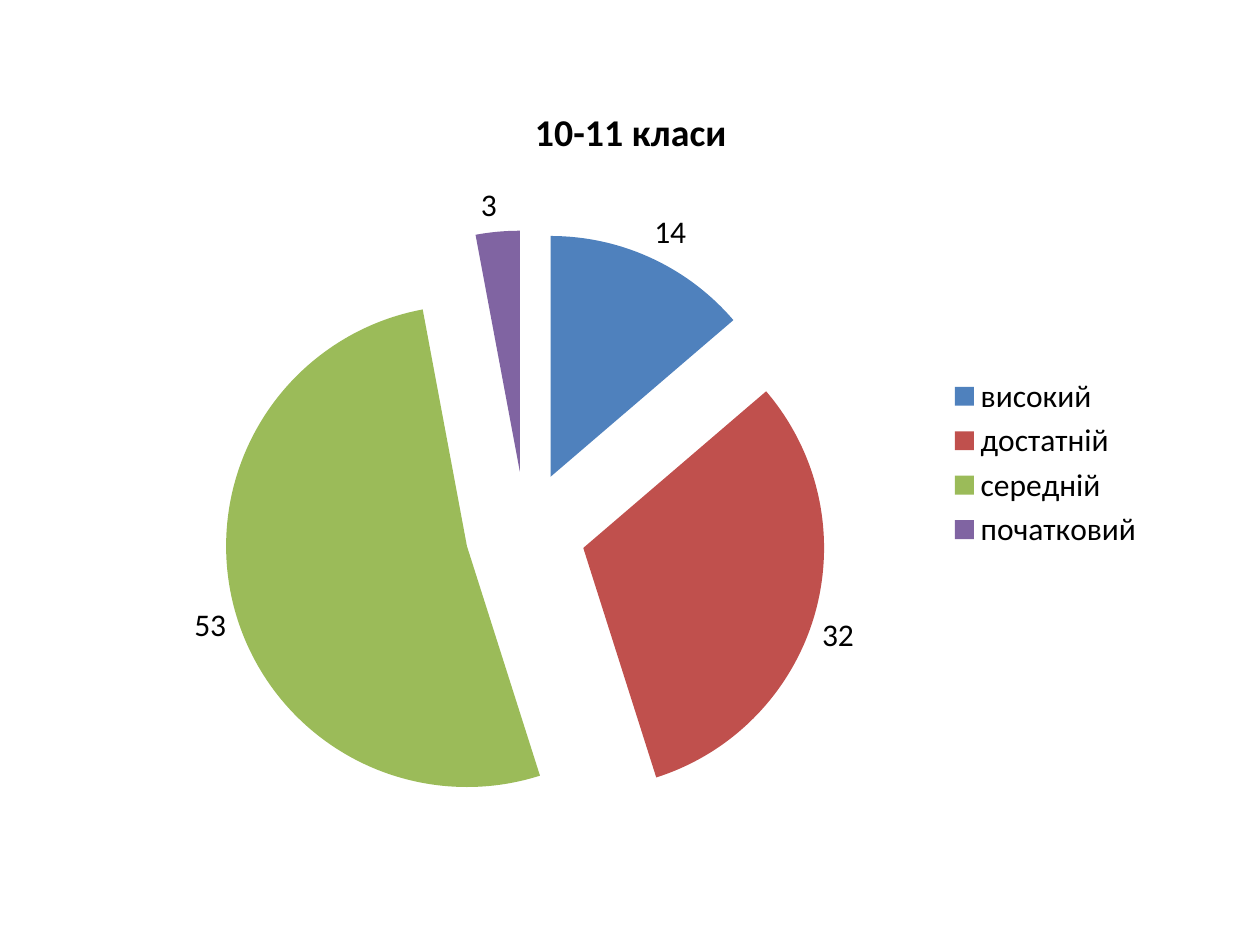
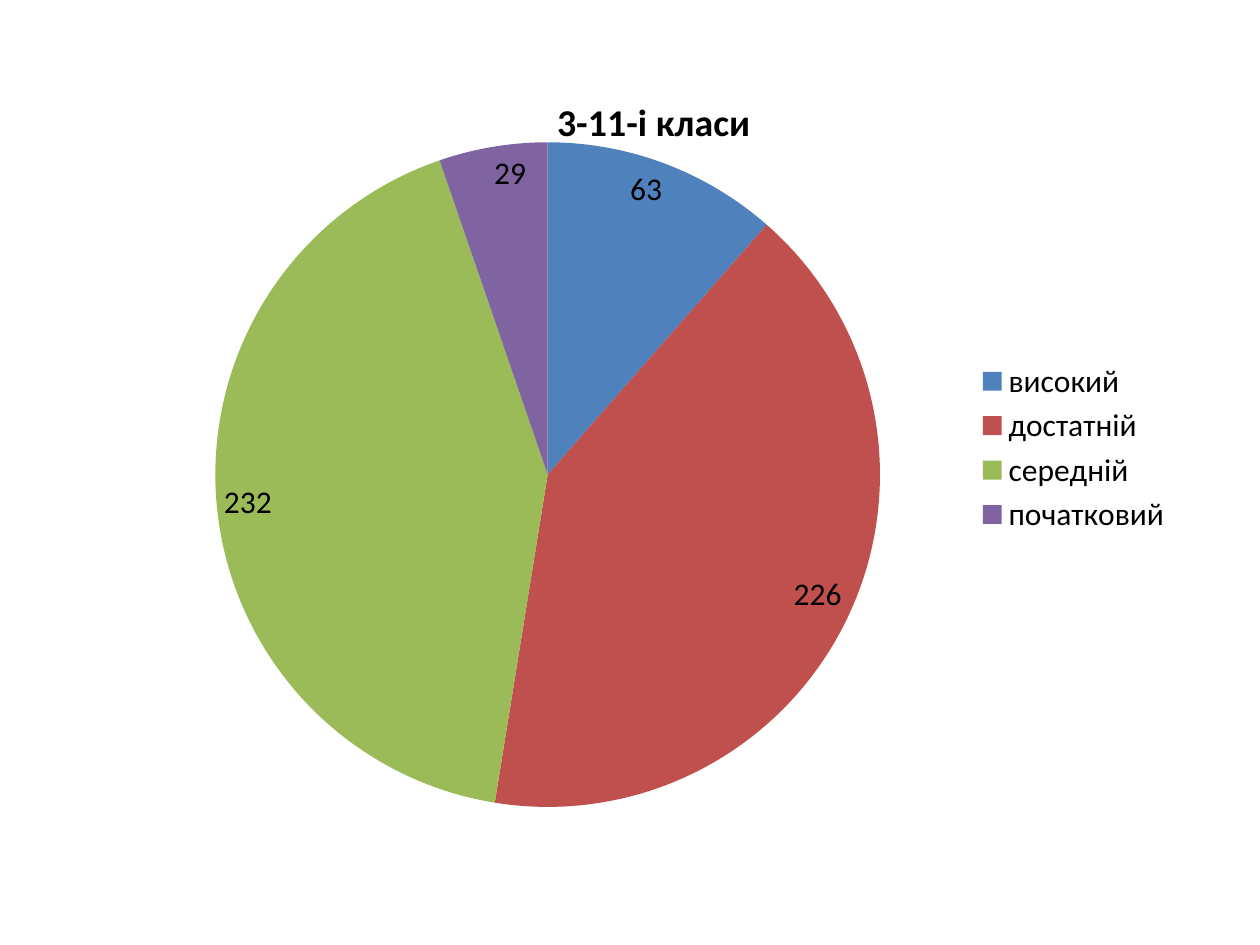
from lxml.etree import SubElement
from pptx import Presentation
from pptx.chart.data import CategoryChartData
from pptx.dml.color import RGBColor
from pptx.enum.chart import XL_CHART_TYPE, XL_LABEL_POSITION, XL_LEGEND_POSITION
from pptx.oxml.ns import qn
from pptx.util import Pt

# Shared settings
PX = 914400 // 126
FONT = "Calibri"
COLORS = {"text": "000000", "background": "FFFFFF"}
LEVEL_COLORS = {
    "високий": "4F81BD",
    "достатній": "C0504D",
    "середній ": "9BBB59",
    "початковий": "8064A2",
}


def style_font(font, size, bold=False):
    font.name = FONT
    font.size = Pt(size)
    font.bold = bold
    font.color.rgb = RGBColor.from_string(COLORS["text"])


# One pie per group of classes; box is left, top, width, height in px
pies = [
    {"title": "10-11 класи", "values": (14, 32, 53, 3), "box": (105, 76, 1052, 774),
     "labels": XL_LABEL_POSITION.OUTSIDE_END, "explosion": 25, "plot": None},
    {"title": "3-11-і класи", "values": (63, 226, 232, 29), "box": (123, 66, 1062, 764),
     "labels": XL_LABEL_POSITION.INSIDE_END, "explosion": 0,
     "plot": {"x": 0.02, "y": 0.1, "w": 0.76, "h": 0.87}},
]

presentation = Presentation()
presentation.slide_width = 1260 * PX
presentation.slide_height = 945 * PX

for pie in pies:
    slide = presentation.slides.add_slide(presentation.slide_layouts[6])
    slide.background.fill.solid()
    slide.background.fill.fore_color.rgb = RGBColor.from_string(COLORS["background"])

    # Chart and its data
    chart_data = CategoryChartData()
    chart_data.categories = list(LEVEL_COLORS)
    chart_data.add_series(pie["title"], pie["values"])
    box = [length * PX for length in pie["box"]]
    chart = slide.shapes.add_chart(XL_CHART_TYPE.PIE, *box, chart_data).chart
    style_font(chart.font, 18)

    # Title
    chart.has_title = True
    chart.chart_title.include_in_layout = False
    title_frame = chart.chart_title.text_frame
    title_frame.text = pie["title"]
    style_font(title_frame.paragraphs[0].runs[0].font, 21.6, bold=True)

    # Legend
    chart.has_legend = True
    chart.legend.position = XL_LEGEND_POSITION.RIGHT
    chart.legend.include_in_layout = False

    # Slices
    plot = chart.plots[0]
    plot.vary_by_categories = True
    series = plot.series[0]
    for index, color in enumerate(LEVEL_COLORS.values()):
        fill = series.points[index].format.fill
        fill.solid()
        fill.fore_color.rgb = RGBColor.from_string(color)
    if pie["explosion"]:
        series_xml = series._element
        explosion = SubElement(series_xml, qn("c:explosion"), val=str(pie["explosion"]))
        series_xml.find(qn("c:tx")).addnext(explosion)

    # Value labels
    labels = series.data_labels
    labels.show_value = True
    labels.position = pie["labels"]
    style_font(labels.font, 18)

    # Fixed plot area
    if pie["plot"]:
        plot_area = chart._chartSpace.chart.plotArea
        layout = plot_area.find(qn("c:layout"))
        if layout is None:
            layout = SubElement(plot_area, qn("c:layout"))
            plot_area.insert(0, layout)
        manual = SubElement(layout, qn("c:manualLayout"))
        settings = {"layoutTarget": "inner", "xMode": "edge", "yMode": "edge", **pie["plot"]}
        for name, value in settings.items():
            SubElement(manual, qn(f"c:{name}"), val=str(value))

presentation.save("out.pptx")
